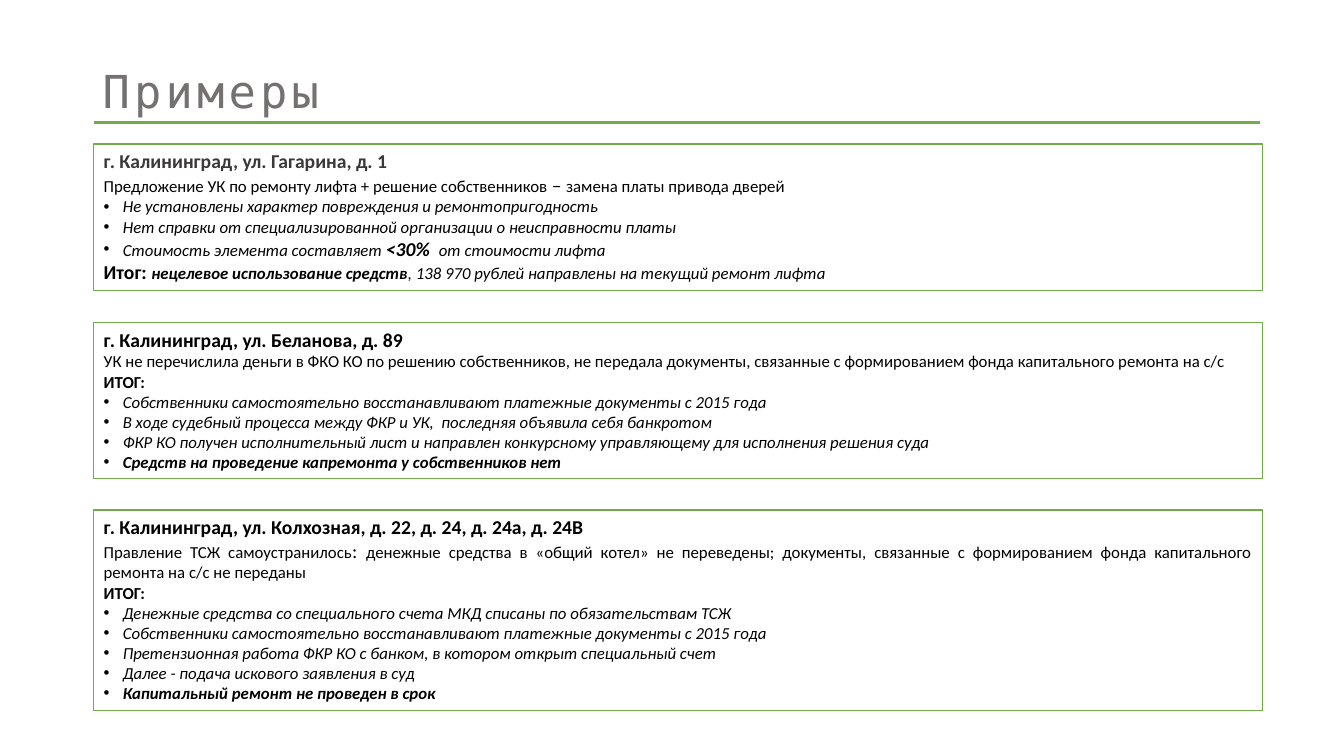
from dataclasses import dataclass

from lxml import etree
from pptx import Presentation
from pptx.dml.color import RGBColor
from pptx.enum.shapes import MSO_SHAPE
from pptx.enum.text import MSO_ANCHOR, MSO_AUTO_SIZE, PP_ALIGN
from pptx.oxml.ns import qn
from pptx.slide import Slide
from pptx.util import Inches, Pt

COLORS = {
    "green": "70AD47",
    "white": "FFFFFF",
    "black": "000000",
    "dark": "3B3838",
    "title": "767171",
}


@dataclass
class Run:
    text: str
    size: float = 12
    bold: bool = False
    italic: bool = False
    color: str = "black"


@dataclass
class Para:
    runs: list[Run]
    bullet: bool = False


@dataclass
class Case:
    top: float
    height: float
    paras: list[Para]


def rgb(name: str) -> RGBColor:
    return RGBColor.from_string(COLORS[name])


def heading(text: str, color: str = "black") -> Para:
    return Para([Run(text, 14, bold=True, color=color)])


def bullet(text: str, bold: bool = False) -> Para:
    return Para([Run(text, bold=bold, italic=True)], bullet=True)


RESULT = Para([Run("ИТОГ:", bold=True)])
RESTORE = bullet("Собственники самостоятельно восстанавливают платежные документы с 2015 года")

CASES = [
    Case(1.43, 1.45, [
        heading("г. Калининград, ул. Гагарина, д. 1", "dark"),
        Para([
            Run("Предложение УК по ремонту лифта + решение собственников "),
            Run("– ", 14),
            Run("замена платы привода дверей"),
        ]),
        bullet("Не установлены характер повреждения и ремонтопригодность"),
        bullet("Нет справки от специализированной организации о неисправности платы"),
        Para([
            Run("Стоимость элемента составляет ", italic=True),
            Run("<30%  ", 14, bold=True, italic=True),
            Run("от стоимости лифта", italic=True),
        ], bullet=True),
        Para([
            Run("Итог: ", 14, bold=True),
            Run("нецелевое использование средств", bold=True, italic=True),
            Run(", 138 970 рублей направлены на текущий ремонт лифта", italic=True),
        ]),
    ]),
    Case(3.2, 1.55, [
        heading("г. Калининград, ул. Беланова, д. 89"),
        Para([Run("УК не перечислила деньги в ФКО КО по решению собственников, не передала "
                  "документы, связанные с формированием фонда капитального ремонта на с/с")]),
        RESULT,
        RESTORE,
        bullet("В ходе судебный процесса между ФКР и УК,  последняя объявила себя банкротом"),
        bullet("ФКР КО получен исполнительный лист и направлен конкурсному управляющему "
               "для исполнения решения суда"),
        bullet("Средств на проведение капремонта у собственников нет", bold=True),
    ]),
    Case(5.06, 1.99, [
        heading("г. Калининград, ул. Колхозная, д. 22, д. 24, д. 24а, д. 24В"),
        Para([
            Run("Правление ТСЖ самоустранилось"),
            Run(": ", 14),
            Run("денежные средства в «общий котел» не переведены; документы, связанные с "
                "формированием фонда капитального ремонта на с/с не переданы"),
        ]),
        RESULT,
        bullet("Денежные средства со специального счета МКД списаны по обязательствам ТСЖ"),
        RESTORE,
        bullet("Претензионная работа ФКР КО с банком, в котором открыт специальный счет"),
        bullet("Далее - подача искового заявления в суд"),
        bullet("Капитальный ремонт не проведен в срок", bold=True),
    ]),
]


def add_rect(s: Slide, left: float, top: float, height: float,
             fill: str, line: str, line_width: float):
    sp = s.shapes.add_shape(MSO_SHAPE.RECTANGLE, Inches(left), Inches(top),
                            Inches(11.59), Inches(height))
    sp.shadow.inherit = False
    sp.fill.solid()
    sp.fill.fore_color.rgb = rgb(fill)
    sp.line.color.rgb = rgb(line)
    sp.line.width = Pt(line_width)
    return sp


def set_bullet(p) -> None:
    pPr = p._p.get_or_add_pPr()
    pPr.set("marL", str(Inches(0.19)))
    pPr.set("indent", str(-Inches(0.19)))
    etree.SubElement(pPr, qn("a:buFont"), typeface="Arial")
    etree.SubElement(pPr, qn("a:buChar"), char="•")


def add_title(s: Slide, text: str) -> None:
    sp = s.shapes.add_textbox(Inches(0.92), Inches(0.58), Inches(11.43), Inches(0.64))
    tf = sp.text_frame
    tf.word_wrap = True
    tf.vertical_anchor = MSO_ANCHOR.MIDDLE
    tf.text = text
    r = tf.paragraphs[0].runs[0]
    r.font.name = "DejaVu Sans Mono"
    r.font.size = Pt(32.4)
    r.font.color.rgb = rgb("title")
    r.font._element.set("spc", "300")


def add_case(s: Slide, case: Case) -> None:
    sp = add_rect(s, 0.93, case.top, case.height, "white", "green", 1)
    tf = sp.text_frame
    tf.word_wrap = True
    tf.auto_size = MSO_AUTO_SIZE.SHAPE_TO_FIT_TEXT
    tf.vertical_anchor = MSO_ANCHOR.TOP
    for i, para in enumerate(case.paras):
        p = tf.add_paragraph() if i else tf.paragraphs[0]
        p.alignment = PP_ALIGN.JUSTIFY
        if para.bullet:
            set_bullet(p)
        for run in para.runs:
            r = p.add_run()
            r.text = run.text
            r.font.name = "Calibri"
            r.font.size = Pt(run.size)
            r.font.bold = run.bold
            r.font.italic = run.italic
            r.font.color.rgb = rgb(run.color)


def main() -> None:
    prs = Presentation()
    prs.slide_width, prs.slide_height = Inches(13.33), Inches(7.5)
    s = prs.slides.add_slide(prs.slide_layouts[6])
    add_title(s, "Примеры")
    add_rect(s, 0.92, 1.19, 0.05, "green", "white", 1.5)
    for case in CASES:
        add_case(s, case)
    prs.save("out.pptx")


if __name__ == "__main__":
    main()
